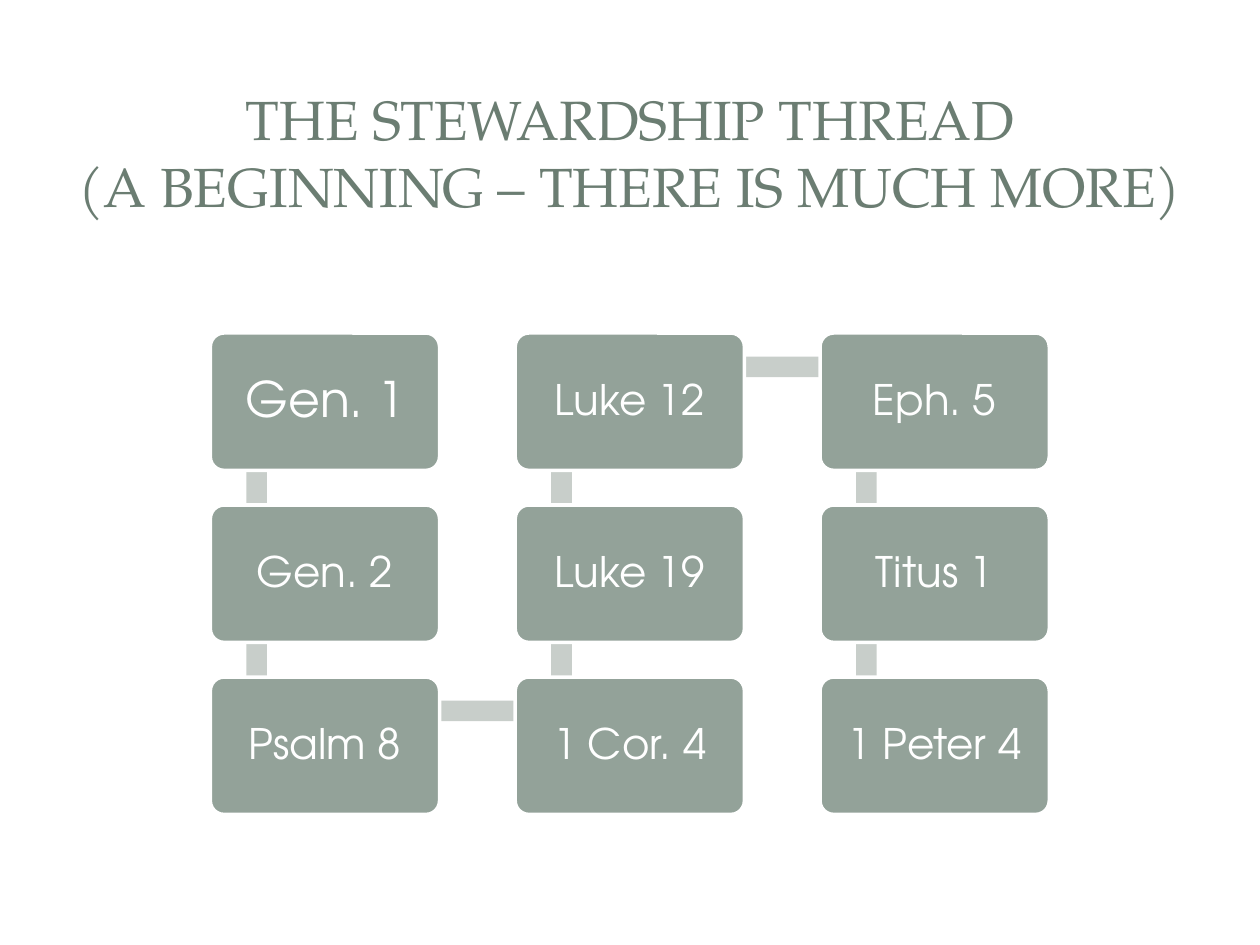
from pptx import Presentation
from pptx.dml.color import RGBColor
from pptx.enum.shapes import MSO_SHAPE
from pptx.enum.text import MSO_ANCHOR, MSO_AUTO_SIZE, PP_ALIGN
from pptx.util import Pt

RECTANGLE, ROUNDED = MSO_SHAPE.RECTANGLE, MSO_SHAPE.ROUNDED_RECTANGLE
CENTER, MIDDLE = PP_ALIGN.CENTER, MSO_ANCHOR.MIDDLE

TITLE = "THE STEWARDSHIP THREAD\v(A BEGINNING – THERE IS MUCH MORE)"
PASSAGES = ["Gen. 1", "Gen. 2", "Psalm 8", "1 Cor. 4", "Luke 19",
            "Luke 12", "Eph. 5", "Titus 1", "1 Peter 4"]
FIRST_SIZE, OTHER_SIZE = 28, 24

ROWS = 3
LEFT, TOP = 120.2, 190.3
BOX_WIDTH, BOX_HEIGHT = 131, 78.5
COLUMN_PITCH, ROW_PITCH = 174.2, 98.3
# The thread runs through this point of every box, measured from its corner.
THREAD_X, THREAD_Y, THREAD_WIDTH = 26.5, 19.4, 11.8


def rgb(value):
    return RGBColor.from_string(value)


def format_text(frame, font, size, color):
    frame.word_wrap = True
    frame.auto_size = MSO_AUTO_SIZE.NONE
    frame.vertical_anchor = MIDDLE
    for para in frame.paragraphs:
        para.alignment = CENTER
        for span in para.runs:
            span.font.name = font
            span.font.size = Pt(size)
            span.font.color.rgb = rgb(color)


def add_block(page, kind, left, top, width, height, fill):
    block = page.shapes.add_shape(kind, Pt(left), Pt(top), Pt(width), Pt(height))
    block.shadow.inherit = False
    block.fill.solid()
    block.fill.fore_color.rgb = rgb(fill)
    block.line.fill.background()
    return block


def corner(index):
    """Return the top left of a box; the order snakes down and up the columns."""
    column, row = divmod(index, ROWS)
    if column % 2:
        row = ROWS - 1 - row
    return LEFT + column * COLUMN_PITCH, TOP + row * ROW_PITCH


def add_thread(page, start, end):
    left, top = min(start[0], end[0]), min(start[1], end[1])
    width = abs(end[0] - start[0]) or THREAD_WIDTH
    height = abs(end[1] - start[1]) or THREAD_WIDTH
    if width == THREAD_WIDTH:
        left -= THREAD_WIDTH / 2
    else:
        top -= THREAD_WIDTH / 2
    add_block(page, RECTANGLE, left + THREAD_X, top + THREAD_Y,
              width, height, "C8CECA")


def add_passage(page, label, left, top, size):
    box = add_block(page, ROUNDED, left, top, BOX_WIDTH, BOX_HEIGHT, "93A299")
    box.adjustments[0] = 0.1
    box.line.color.rgb = rgb("FFFFFF")
    box.line.width = Pt(2)
    frame = box.text_frame
    frame.text = label
    frame.margin_left = frame.margin_right = Pt(7)
    frame.margin_top = frame.margin_bottom = Pt(7)
    frame.paragraphs[0].line_spacing = 0.9
    format_text(frame, "TeX Gyre Adventor", size, "FFFFFF")


def main():
    deck = Presentation()
    deck.slide_width, deck.slide_height = Pt(720), Pt(540)
    page = deck.slides.add_slide(deck.slide_layouts[5])

    title = page.shapes.title
    title.left, title.top, title.width, title.height = Pt(24), Pt(35.3), Pt(672), Pt(103)
    title.text_frame.text = TITLE
    format_text(title.text_frame, "TeX Gyre Pagella", 31.5, "6B7D72")

    corners = [corner(index) for index in range(len(PASSAGES))]
    for start, end in zip(corners, corners[1:]):
        add_thread(page, start, end)
    for index, (label, (left, top)) in enumerate(zip(PASSAGES, corners)):
        add_passage(page, label, left, top, OTHER_SIZE if index else FIRST_SIZE)

    deck.save("out.pptx")


if __name__ == "__main__":
    main()
